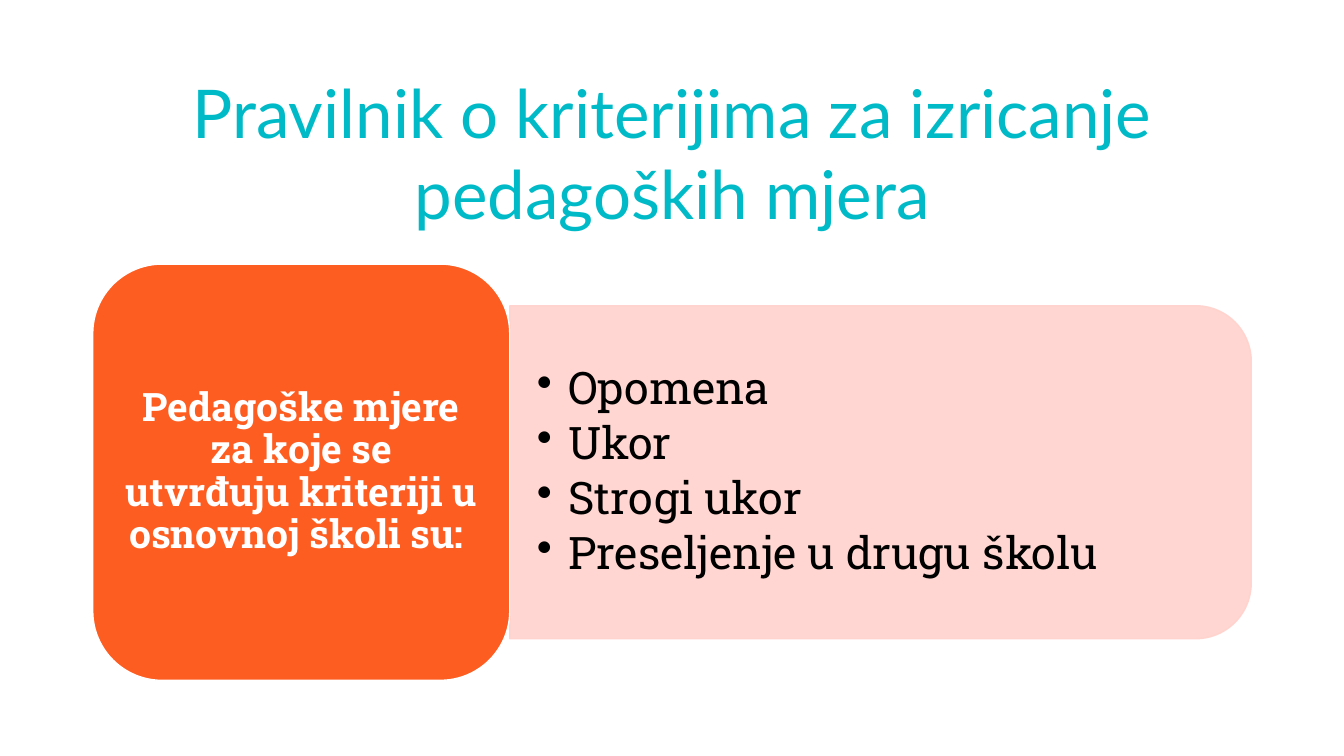
from lxml.etree import SubElement
from pptx import Presentation
from pptx.dml.color import RGBColor
from pptx.enum.shapes import MSO_SHAPE
from pptx.enum.text import MSO_ANCHOR, PP_ALIGN
from pptx.oxml.ns import qn
from pptx.util import Inches, Pt


def color(hex_string):
    return RGBColor.from_string(hex_string)


def set_text(shape, lines, font_name, size, hex_color, anchor, insets):
    """Fill a text frame with one paragraph per line and return the paragraphs."""
    frame = shape.text_frame
    frame.word_wrap = True
    frame.vertical_anchor = anchor
    frame.margin_left = frame.margin_right = Inches(insets[0])
    frame.margin_top = frame.margin_bottom = Inches(insets[1])
    frame.text = "\n".join(lines)
    for paragraph in frame.paragraphs:
        paragraph.font.name = font_name
        paragraph.font.size = Pt(size)
        paragraph.font.color.rgb = color(hex_color)
    return frame.paragraphs


presentation = Presentation()
presentation.slide_width = Inches(13.33)
presentation.slide_height = Inches(7.5)
slide = presentation.slides.add_slide(presentation.slide_layouts[6])

# Layout: the content spans the slide between equal margins
margin = Inches(0.92)
content_width = presentation.slide_width - 2 * margin
card_width = int(content_width * 0.36)
panel_left = margin + card_width
panel_width = content_width - card_width
card_top, card_height = Inches(2.62), Inches(4.13)
panel_height = int(card_height * 0.8)
panel_top = card_top + (card_height - panel_height) // 2

# Title
title = slide.shapes.add_textbox(margin, Inches(0.4), content_width, Inches(1.96))
title_paragraph = set_text(
    title, ["Pravilnik o kriterijima za izricanje pedagoških mjera"],
    "Lato", 48, "00BAC8", MSO_ANCHOR.BOTTOM, (0.1, 0.05))[0]
title_paragraph.alignment = PP_ALIGN.CENTER

# Pink panel, a quarter turn about its centre puts the round corners on the right
panel = slide.shapes.add_shape(
    MSO_SHAPE.ROUND_2_SAME_RECTANGLE,
    panel_left + (panel_width - panel_height) // 2,
    panel_top + (panel_height - panel_width) // 2,
    panel_height, panel_width)
panel.rotation = 90
panel.shadow.inherit = False
panel.fill.solid()
panel.fill.fore_color.rgb = color("FFD2CD")
panel.line.color.rgb = color("FFD2CD")
panel.line.width = Pt(1)
for pink in panel._element.spPr.iter(qn("a:srgbClr")):
    SubElement(pink, qn("a:alpha"), val="90000")

# Bulleted list of measures
measures = slide.shapes.add_textbox(
    panel_left, Inches(3.2), Inches(7.2), Inches(2.98))
measures.text_frame.text = "\n".join(
    ["Opomena", "Ukor", "Strogi ukor", "Preseljenje u drugu školu"])
lines = [paragraph.text for paragraph in measures.text_frame.paragraphs]
indent = Inches(0.31)
for paragraph in set_text(measures, lines, "Roboto Slab", 32, "000000",
                          MSO_ANCHOR.MIDDLE, (0.27, 0.14)):
    paragraph.line_spacing = 0.9
    paragraph.space_after = Pt(4.8)
    properties = paragraph._p.get_or_add_pPr()
    properties.set("marL", str(indent))
    properties.set("indent", str(-indent))
    bullet = properties.makeelement(qn("a:buChar"), {"char": "•"})
    properties.insert_element_before(bullet, "a:tabLst", "a:defRPr", "a:extLst")

# Orange card
card = slide.shapes.add_shape(
    MSO_SHAPE.ROUNDED_RECTANGLE, margin, card_top, card_width, card_height)
card.shadow.inherit = False
card.fill.solid()
card.fill.fore_color.rgb = color("FE5D21")
card.line.color.rgb = color("FFFFFF")
card.line.width = Pt(1)
card_paragraph = set_text(
    card, ["Pedagoške mjere za koje se utvrđuju kriteriji u osnovnoj školi su: "],
    "Roboto Slab", 28, "FFFFFF", MSO_ANCHOR.MIDDLE, (0.12, 0.06))[0]
card_paragraph.alignment = PP_ALIGN.CENTER
card_paragraph.line_spacing = 0.9
card_paragraph.font.bold = True

presentation.save("out.pptx")
